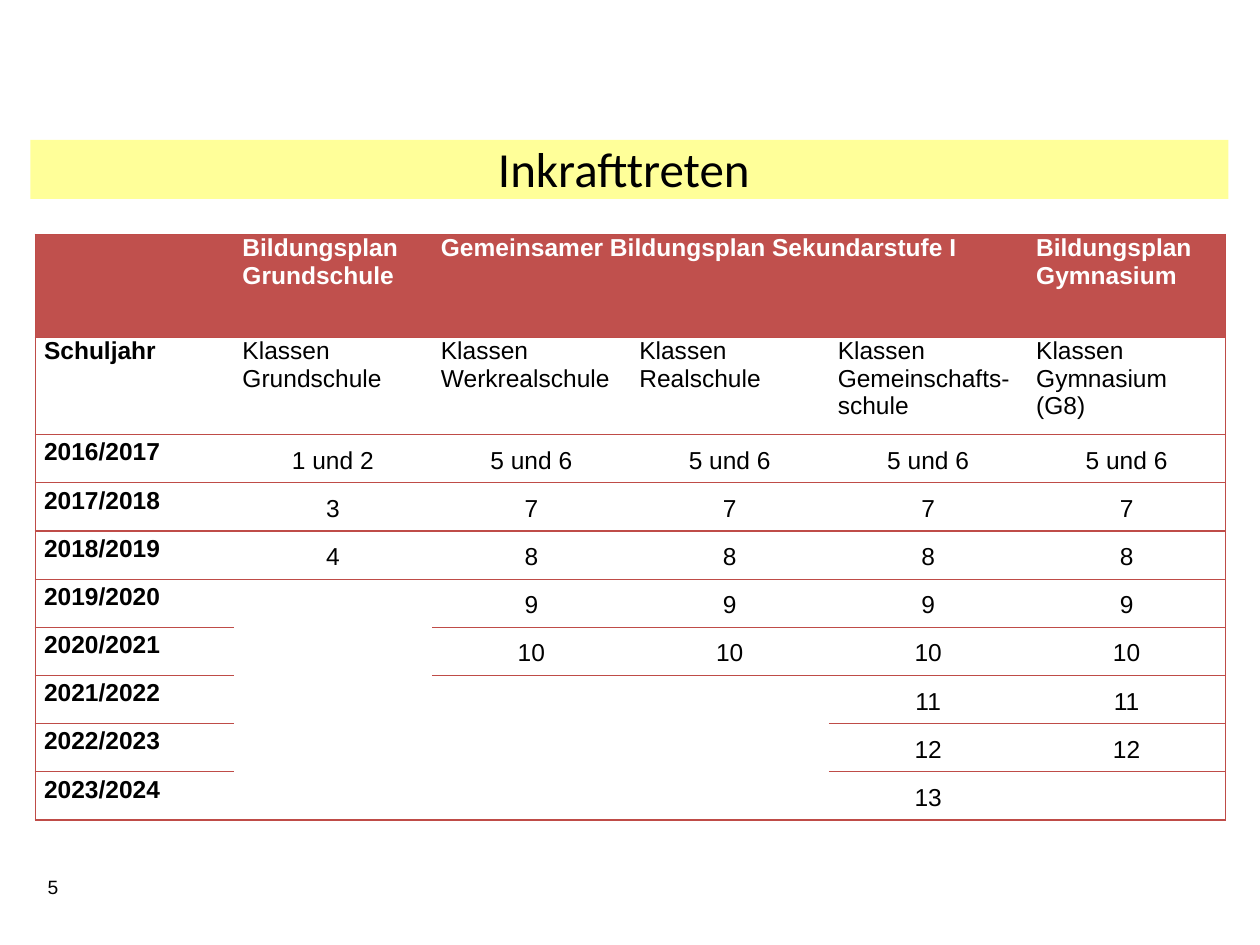
"""Build the slide that shows when each curriculum comes into force."""
import pptx
import pptx.util
import pptx.dml.color
import pptx.enum.shapes
import pptx.enum.text
from lxml import etree

Inches, Pt = pptx.util.Inches, pptx.util.Pt
RGBColor = pptx.dml.color.RGBColor
ALIGN, ANCHOR = pptx.enum.text.PP_ALIGN, pptx.enum.text.MSO_ANCHOR
NS = "http://schemas.openxmlformats.org/drawingml/2006/main"

YELLOW = RGBColor(0xFF, 0xFF, 0x99)
RED = RGBColor(0xC0, 0x50, 0x4D)
RULE = RGBColor(0xBF, 0x4C, 0x48)
BLACK = RGBColor(0, 0, 0)
WHITE = RGBColor(0xFF, 0xFF, 0xFF)

TITLE = "Inkrafttreten "
NUMBER = "5"
HEADS = ["", "Bildungsplan Grundschule", "Gemeinsamer Bildungsplan Sekundarstufe I",
         "", "", "Bildungsplan\nGymnasium"]
KINDS = ["Schuljahr", "Klassen Grundschule", "Klassen \nWerkrealschule",
         "Klassen \nRealschule", "Klassen \nGemeinschafts-schule",
         "Klassen Gymnasium (G8)"]
YEARS = [
    ["2016/2017", "1 und 2", "5 und 6", "5 und 6", "5 und 6", "5 und 6"],
    ["2017/2018", "3", "7", "7", "7", "7"],
    ["2018/2019", "4", "8", "8", "8", "8"],
    ["2019/2020", "", "9", "9", "9", "9"],
    ["2020/2021", "", "10", "10", "10", "10"],
    ["2021/2022", "", "", "", "11", "11"],
    ["2022/2023", "", "", "", "12", "12"],
    ["2023/2024", "", "", "", "13", ""],
]
ROWS = [HEADS, KINDS] + YEARS
SPANS = [((0, 2), (0, 4)), ((5, 1), (9, 1)), ((7, 2), (9, 2)), ((7, 3), (9, 3))]
LEFT, TOP, WIDTH, HEIGHT = 0.28, 1.86, 9.45, 4.65
TALL = [0.82, 0.77]


def write(para, text, name, size, color, bold=False):
    """Add text to a paragraph, one run for each line."""
    for i, line in enumerate(text.split("\n")):
        if i:
            para.add_line_break()
        run = para.add_run()
        run.text = line
        font = run.font
        font.name, font.size, font.bold = name, Pt(size), bold
        font.color.rgb = color


def ruled(row, col):
    """Tell whether a line runs above this row in this column."""
    return not any(a < row <= b and c <= col <= d for (a, c), (b, d) in SPANS)


def border(cell, sides):
    """Draw or clear the four sides of a cell."""
    props = cell._tc.get_or_add_tcPr()
    for i, (side, shown) in enumerate(zip("LRTB", sides)):
        line = etree.Element(f"{{{NS}}}ln{side}", w=str(Pt(0.75)))
        if shown:
            fill = etree.SubElement(line, f"{{{NS}}}solidFill")
            etree.SubElement(fill, f"{{{NS}}}srgbClr", val=str(RULE))
        else:
            etree.SubElement(line, f"{{{NS}}}noFill")
        props.insert(i, line)


def fill_cell(cell, row, col, text):
    """Set the fill, text and borders of one cell."""
    cell.margin_left = cell.margin_right = Inches(0.07)
    cell.margin_top = cell.margin_bottom = 0
    if row == 0:
        cell.fill.solid()
        cell.fill.fore_color.rgb = RED
    else:
        cell.fill.background()
    para = cell.text_frame.paragraphs[0]
    if row > 1:
        para.line_spacing = Pt(18)
        if col:
            para.alignment = ALIGN.CENTER
            cell.vertical_anchor = ANCHOR.MIDDLE
    if text:
        write(para, text, "Arial", 14, BLACK if row else WHITE, row == 0 or col == 0)
    below = cell.is_merge_origin or ruled(row + 1, col)
    border(cell, (col == 0, col == len(HEADS) - 1, ruled(row, col), below))


def add_plan(slide):
    """Add the table of school years and classes."""
    count = len(HEADS)
    frame = slide.shapes.add_table(len(ROWS), count, Inches(LEFT), Inches(TOP),
                                   Inches(WIDTH), Inches(HEIGHT))
    table = frame.table
    table.first_row = table.horz_banding = False
    low = (HEIGHT - sum(TALL)) / len(YEARS)
    for row, size in zip(table.rows, TALL + [low] * len(YEARS)):
        row.height = Inches(size)
    for column in table.columns:
        column.width = Inches(WIDTH / count)
    for start, end in SPANS:
        table.cell(*start).merge(table.cell(*end))
    for r, texts in enumerate(ROWS):
        for c, text in enumerate(texts):
            fill_cell(table.cell(r, c), r, c, text)


def main():
    """Assemble and save the slide."""
    deck = pptx.Presentation()
    deck.slide_width, deck.slide_height = Inches(10), Inches(7.5)
    slide = deck.slides.add_slide(deck.slide_layouts[5])

    title = slide.shapes.title
    title.left, title.top = Inches(0.24), Inches(1.05)
    title.width, title.height = Inches(9.51), Inches(0.57)
    head = title.text_frame.paragraphs[0]
    head.alignment = ALIGN.CENTER
    write(head, TITLE, "Calibri", 28, BLACK)

    bar = slide.shapes.add_shape(pptx.enum.shapes.MSO_SHAPE.RECTANGLE, Inches(0.24),
                                 Inches(1.11), Inches(9.51), Inches(0.47))
    bar.shadow.inherit = False
    bar.fill.solid()
    bar.fill.fore_color.rgb = YELLOW
    bar.line.fill.background()
    title.element.addprevious(bar.element)

    add_plan(slide)

    page = slide.shapes.add_textbox(Inches(0.28), Inches(6.9), Inches(0.55), Inches(0.29))
    page.text_frame.word_wrap = True
    write(page.text_frame.paragraphs[0], NUMBER, "Arial", 11, BLACK)
    deck.save("out.pptx")


if __name__ == "__main__":
    main()
